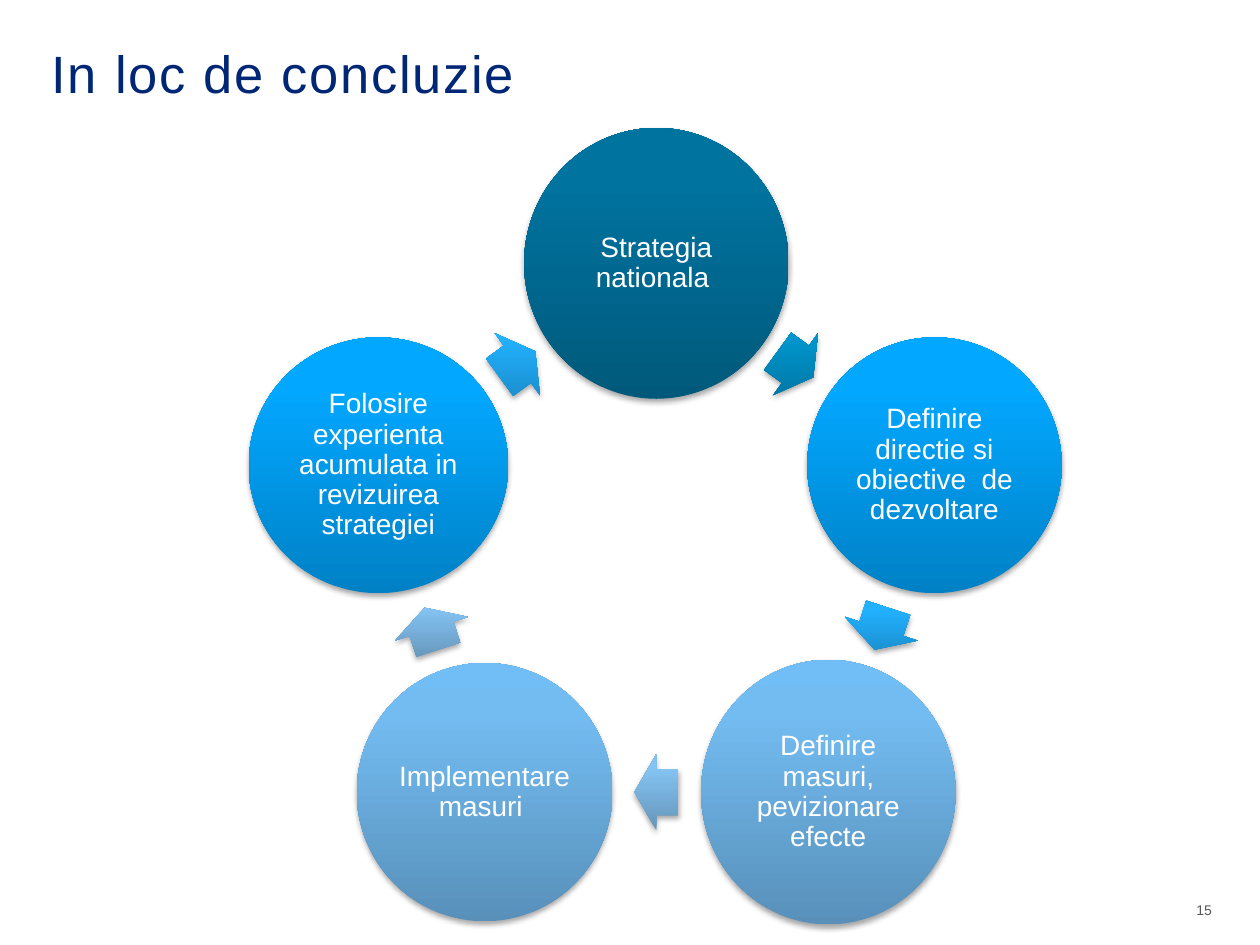
"""Build a slide with a five-step cycle of circles and arrows."""
import math
from dataclasses import dataclass

import pptx
import pptx.dml.color
import pptx.enum.shapes
import pptx.enum.text
import pptx.oxml
import pptx.oxml.ns
import pptx.shapes.autoshape
import pptx.slide
import pptx.text.text
import pptx.util

SHAPE = pptx.enum.shapes.MSO_SHAPE
ALIGN = pptx.enum.text.PP_ALIGN
ANCHOR = pptx.enum.text.MSO_ANCHOR
CELL = pptx.util.Inches(0.1)  # the slide is a grid of 100 columns by 75 rows
COLS, ROWS = 100, 75

Tones = tuple[str, str, str]  # bottom, 80 % of the way up, top


@dataclass(frozen=True)
class Theme:
    font: str = "Arial"
    navy: str = "002776"
    white: str = "FFFFFF"
    grey: str = "575757"
    title: int = 30
    label: int = 16
    small: int = 8
    deep: Tones = ("00597B", "00739F", "0074A0")
    deep_tip: Tones = ("00739E", "0095CD", "0096CE")
    vivid: Tones = ("0081C6", "02A7FF", "04A7FF")
    vivid_tip: Tones = ("1889C6", "22B1FF", "23B1FF")
    pale: Tones = ("5890BA", "73BCF1", "71BDF5")
    pale_tip: Tones = ("6595BA", "83C2F1", "81C3F5")


@dataclass(frozen=True)
class Step:
    text: str
    wide: float
    high: float
    tones: Tones
    tip: Tones  # tones of the arrow that leaves this step


@dataclass(frozen=True)
class Ring:
    x: float = 52.1
    y: float = 44.1
    reach: float = 23.2

    def point(self, turn: float, reach: float) -> tuple[float, float]:
        """Point at a clockwise angle in degrees from the top."""
        rad = math.radians(turn)
        return self.x + reach * math.sin(rad), self.y - reach * math.cos(rad)


THEME = Theme()
RING = Ring()
STEPS = [
    Step("Strategia nationala ", 21, 21.5, THEME.deep, THEME.deep_tip),
    Step("Definire directie si obiective  de dezvoltare", 20.2, 20.3,
         THEME.vivid, THEME.vivid_tip),
    Step("Definire masuri, pevizionare efecte", 20.2, 21,
         THEME.pale, THEME.pale_tip),
    Step("Implementare masuri ", 20.3, 20.5, THEME.pale, THEME.pale_tip),
    Step("Folosire experienta acumulata in revizuirea strategiei", 20.6, 20.3,
         THEME.vivid, THEME.vivid_tip),
]
TIP_WIDE, TIP_HIGH = 3.5, 6.1


def grid(*cells: float) -> list[int]:
    return [round(cell * CELL) for cell in cells]


def shade(shape: pptx.shapes.autoshape.Shape, tones: Tones) -> None:
    """Give an upright gradient and a soft shadow below, with no outline."""
    space = pptx.oxml.ns.nsdecls("a")
    stops = "".join(
        f'<a:gs pos="{pos}000"><a:srgbClr val="{tone}"/></a:gs>'
        for pos, tone in zip((0, 80, 100), tones))
    fill = pptx.oxml.parse_xml(
        f'<a:gradFill {space} rotWithShape="0"><a:gsLst>{stops}</a:gsLst>'
        '<a:lin ang="16200000" scaled="0"/></a:gradFill>')
    glow = pptx.oxml.parse_xml(
        f'<a:effectLst {space}><a:outerShdw blurRad="40000" dist="23000" '
        'dir="5400000" rotWithShape="0"><a:srgbClr val="000000">'
        '<a:alpha val="35000"/></a:srgbClr></a:outerShdw></a:effectLst>')
    shape.line.fill.background()
    props = shape.element.spPr
    props.ln.addprevious(fill)
    props.append(glow)


def draw(slide: pptx.slide.Slide, kind: SHAPE, mid: tuple[float, float],
         wide: float, high: float,
         tones: Tones) -> pptx.shapes.autoshape.Shape:
    """Add a shaded shape around its middle point."""
    x, y = mid
    shape = slide.shapes.add_shape(
        kind, *grid(x - wide / 2, y - high / 2, wide, high))
    shade(shape, tones)
    return shape


def write(frame: pptx.text.text.TextFrame, text: str, size: int, color: str,
          align: ALIGN, anchor: ANCHOR, pad: float = 0,
          lead: float = 1) -> None:
    frame.word_wrap = True
    frame.auto_size = pptx.enum.text.MSO_AUTO_SIZE.NONE
    frame.vertical_anchor = anchor
    frame.margin_left = frame.margin_right = round(pad * CELL)
    frame.margin_top = frame.margin_bottom = round(pad * CELL)
    frame.text = text
    para = frame.paragraphs[0]
    para.alignment, para.line_spacing = align, lead
    para.font.name, para.font.size = THEME.font, pptx.util.Pt(size)
    para.font.color.rgb = pptx.dml.color.RGBColor.from_string(color)


def add_title(slide: pptx.slide.Slide, text: str) -> None:
    title = slide.shapes.title
    title.left, title.top, title.width, title.height = grid(
        4.1, 4.2, 91.7, 7.3)
    write(title.text_frame, text, THEME.title, THEME.navy,
          ALIGN.LEFT, ANCHOR.TOP, lead=0.8)
    run = title.text_frame.paragraphs[0].runs[0]
    run.font._element.set("spc", "100")  # letter spacing of one point


def add_cycle(slide: pptx.slide.Slide, steps: list[Step]) -> None:
    turn = 360 / len(steps)
    inner = RING.reach * math.cos(math.radians(turn / 2))
    for i, step in enumerate(steps):
        disc = draw(slide, SHAPE.OVAL, RING.point(i * turn, RING.reach),
                    step.wide, step.high, step.tones)
        write(disc.text_frame, step.text, THEME.label, THEME.white,
              ALIGN.CENTER, ANCHOR.MIDDLE, pad=0.2, lead=0.9)
        angle = (i + 0.5) * turn
        tip = draw(slide, SHAPE.RIGHT_ARROW, RING.point(angle, inner),
                   TIP_WIDE, TIP_HIGH, step.tip)
        tip.adjustments[0], tip.adjustments[1] = 0.6, 0.5
        tip.rotation = angle


def main() -> None:
    deck = pptx.Presentation()
    deck.slide_width, deck.slide_height = grid(COLS, ROWS)
    slide = deck.slides.add_slide(deck.slide_layouts[5])
    add_title(slide, "In loc de concluzie")
    add_cycle(slide, STEPS)
    number = slide.shapes.add_textbox(*grid(87.5, 70.8, 8.7, 2.8))
    write(number.text_frame, "15", THEME.small, THEME.grey,
          ALIGN.RIGHT, ANCHOR.MIDDLE)
    deck.save("out.pptx")


if __name__ == "__main__":
    main()
